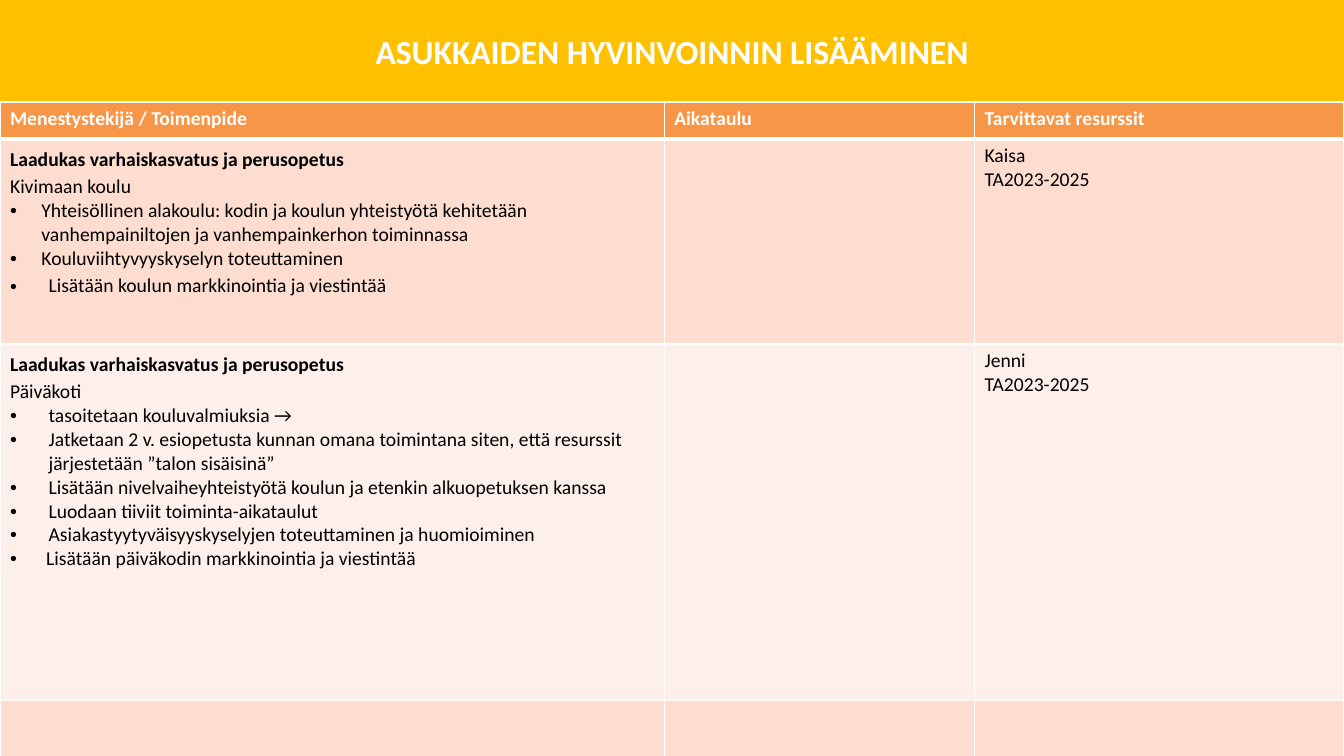
from pptx import Presentation
from pptx.dml.color import RGBColor as RGB
from pptx.enum.shapes import MSO_SHAPE as Shape
from pptx.enum.text import MSO_ANCHOR as Anchor, PP_ALIGN as Align
from pptx.oxml.ns import qn
from pptx.util import Cm, Pt
from lxml.etree import SubElement as Sub

hues = {"gold": "FFC000", "head": "F79646", "dark": "FCDDCF",
        "pale": "FDEFE9", "white": "FFFFFF", "black": "000000"}


def style(para, size, hue, bold=False):
    font = para.font
    font.name, font.size, font.bold = "Calibri", Pt(size), bold
    font.color.rgb = RGB.from_string(hues[hue])


def edge(cell, side, width):
    line = Sub(cell._tc.get_or_add_tcPr(), qn(f"a:ln{side}"), w=str(Pt(width)))
    Sub(Sub(line, qn("a:solidFill")), qn("a:srgbClr"), val=hues["white"])


deck = Presentation()
deck.slide_width, deck.slide_height = Cm(33.87), Cm(19.05)
slide = deck.slides.add_slide(deck.slide_layouts[5])

band = slide.shapes.add_shape(Shape.RECTANGLE, Cm(-0.23), 0, Cm(34.26), Cm(2.57))
band.shadow.inherit = False
band.fill.solid()
band.fill.fore_color.rgb = RGB.from_string(hues["gold"])
band.line.fill.background()
slide.shapes._spTree.insert(2, band._element)

title = slide.shapes.title
title.left, title.top, title.width, title.height = Cm(1.7), 0, Cm(30.48), Cm(2.57)
title.text_frame.text = "ASUKKAIDEN HYVINVOINNIN LISÄÄMINEN"
title.text_frame.vertical_anchor = Anchor.MIDDLE
para = title.text_frame.paragraphs[0]
para.alignment = Align.CENTER
style(para, 24, "white", True)

topic = ("Laadukas varhaiskasvatus ja perusopetus", 0, 1.15, True)
school = [
    topic,
    ("Kivimaan koulu", 0, 1.15),
    ("Yhteisöllinen alakoulu: kodin ja koulun yhteistyötä kehitetään "
     "vanhempainiltojen ja vanhempainkerhon toiminnassa", 0.79),
    ("Kouluviihtyvyyskyselyn toteuttaminen", 0.79),
    ("Lisätään koulun markkinointia ja viestintää", 0.97, 1.15),
]
nursery = [
    topic,
    ("Päiväkoti", 0, 1.15),
    ("tasoitetaan kouluvalmiuksia →", 0.97),
    ("Jatketaan 2 v. esiopetusta kunnan omana toimintana siten, että resurssit "
     "järjestetään ”talon sisäisinä”", 0.97),
    ("Lisätään nivelvaiheyhteistyötä koulun ja etenkin alkuopetuksen kanssa", 0.97),
    ("Luodaan tiiviit toiminta-aikataulut", 0.97),
    ("Asiakastyytyväisyyskyselyjen toteuttaminen ja huomioiminen", 0.97),
    ("Lisätään päiväkodin markkinointia ja viestintää", 0.91),
]
heads = ["Menestystekijä / Toimenpide", "Aikataulu", "Tarvittavat resurssit"]
rows = [
    (0.94, "head", [[(head, 0, 1, True)] for head in heads]),
    (5.16, "dark", [school, [], [("Kaisa",), ("TA2023-2025",)]]),
    (8.99, "pale", [nursery, [], [("Jenni",), ("TA2023-2025",)]]),
    (3.71, "dark", [[], [], []]),
]
widths = [16.74, 7.82, 9.31]

table = slide.shapes.add_table(len(rows), len(widths), 0, Cm(2.57),
                               Cm(sum(widths)), Cm(sum(row[0] for row in rows))).table
table.horz_banding = False
for col, width in zip(table.columns, widths):
    col.width = Cm(width)

for r, (height, hue, cells) in enumerate(rows):
    table.rows[r].height = Cm(height)
    for c, lines in enumerate(cells):
        cell = table.cell(r, c)
        for side in "LRTB":
            thick = (r, side) in [(0, "B"), (1, "T")]
            edge(cell, side, 3 if thick else 1)
        cell.fill.solid()
        cell.fill.fore_color.rgb = RGB.from_string(hues[hue])
        frame = cell.text_frame
        for i, (text, dent, space, bold) in enumerate(
                (*line, *(0, 1, False)[len(line) - 1:]) for line in lines):
            para = frame.paragraphs[0] if i == 0 else frame.add_paragraph()
            para.text = text
            para.line_spacing = space
            if dent:
                props = para._p.get_or_add_pPr()
                props.set("marL", str(Cm(dent)))
                props.set("indent", str(-Cm(dent)))
                Sub(props, qn("a:buFont"), typeface="Arial")
                Sub(props, qn("a:buChar"), char="•")
            style(para, 14, "white" if r == 0 else "black", bold)

deck.save("out.pptx")
